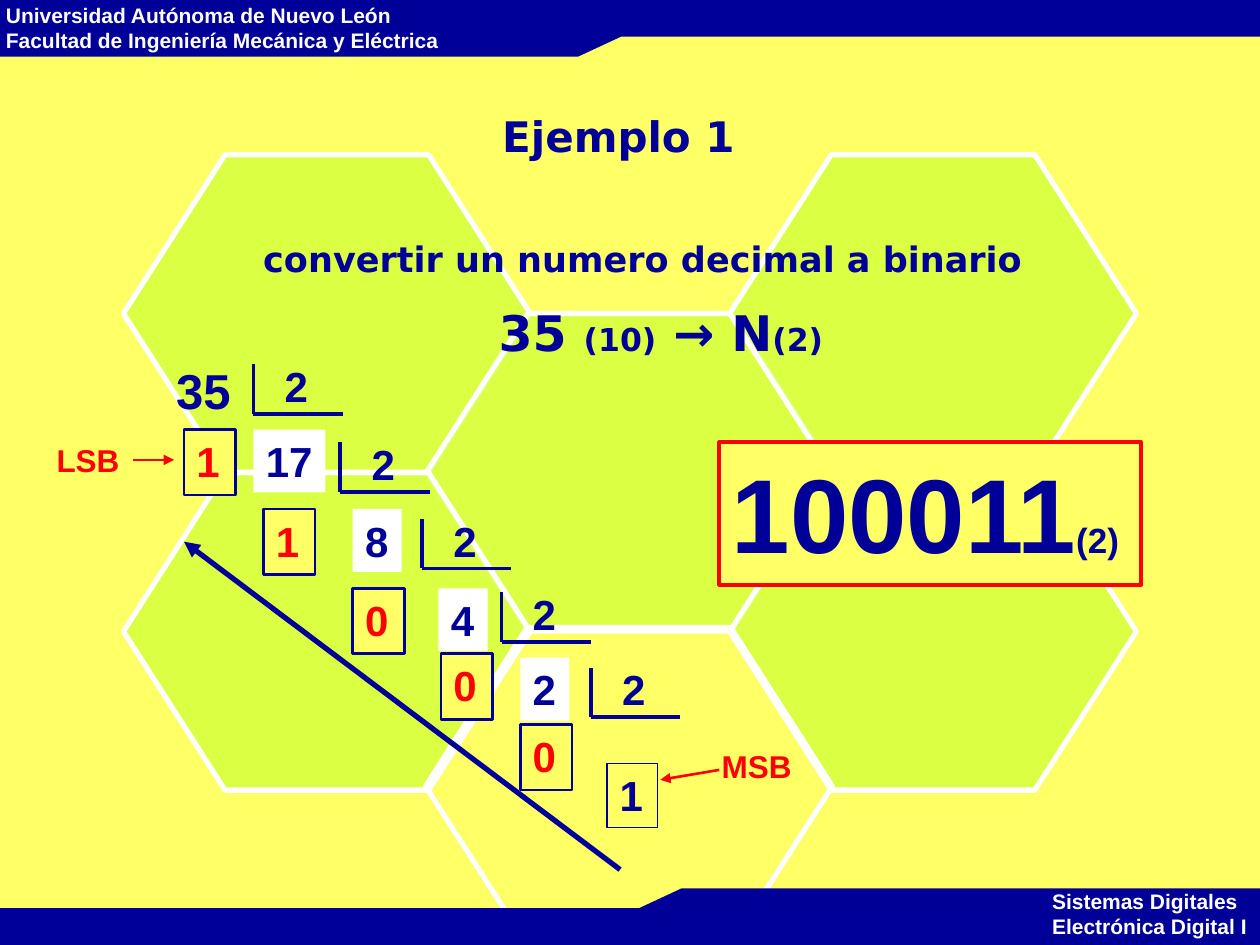
"""Builds the slide that converts decimal 35 to binary by repeated division."""
from dataclasses import dataclass
from typing import Optional

from lxml.etree import SubElement
from pptx import Presentation
from pptx.dml.color import RGBColor
from pptx.enum.shapes import MSO_CONNECTOR as CONN, MSO_SHAPE as SHAPE
from pptx.enum.text import MSO_ANCHOR as ANCHOR, MSO_AUTO_SIZE as AUTO, PP_ALIGN as ALIGN
from pptx.oxml.ns import qn
from pptx.util import Cm, Pt

NAVY, RED, WHITE, YELLOW, LIME = "000099", "FF0000", "FFFFFF", "FFFF66", "CCFF33"
SANS, DISPLAY = "Arial", "DejaVu Sans"
WIDTH, HEIGHT = 25.4, 19.05


@dataclass
class Box:
    x: float
    y: float
    w: float
    h: float
    fill: Optional[str] = None
    line: Optional[str] = None
    weight: float = 1.5


@dataclass
class Division:
    bracket: tuple[float, float]
    remainder: tuple[float, float]
    bit: str
    quotient: Optional[tuple[float, float]] = None
    value: str = ""
    width: float = 0.99


DIVISIONS = [
    Division((5.11, 7.34), (3.71, 8.66), "1", (5.11, 8.66), "17", 1.45),
    Division((6.86, 8.92), (5.31, 10.26), "1", (7.11, 10.26), "8"),
    Division((8.51, 10.46), (7.11, 11.86), "0", (8.84, 11.86), "4"),
    Division((10.11, 11.94), (8.89, 13.18), "0", (10.49, 13.26), "2"),
    Division((11.91, 13.46), (10.49, 14.61), "0"),
]
HEXAGONS = [
    (2.49, 3.12, LIME), (8.6, 6.32, LIME), (14.71, 9.53, LIME),
    (14.71, 3.12, LIME), (2.49, 9.53, LIME), (8.58, 12.65, None),
]
BAND = [(-0.03, 1.14), (-0.05, -0.08), (25.4, -0.05),
        (25.4, 0.74), (12.52, 0.74), (11.66, 1.14)]


def rgb(color: str) -> RGBColor:
    return RGBColor.from_string(color)


def paint(shape, fill: Optional[str], line: Optional[str], weight: float = 1.5) -> None:
    if fill:
        shape.fill.solid()
        shape.fill.fore_color.rgb = rgb(fill)
    else:
        shape.fill.background()
    if line:
        shape.line.color.rgb = rgb(line)
        shape.line.width = Pt(weight)
    else:
        shape.line.fill.background()


def add_run(p, text: str, size: float, color: str, name: str = SANS, bold: bool = True) -> None:
    r = p.add_run()
    r.text = text
    for key, value in {"size": Pt(size), "name": name, "bold": bold}.items():
        setattr(r.font, key, value)
    r.font.color.rgb = rgb(color)


def add_label(s, box: Box, lines: list[str], size: float, color: str):
    sp = s.shapes.add_textbox(Cm(box.x), Cm(box.y), Cm(box.w), Cm(box.h))
    paint(sp, box.fill, box.line, box.weight)
    tf = sp.text_frame
    for key, value in {"word_wrap": False, "auto_size": AUTO.SHAPE_TO_FIT_TEXT}.items():
        setattr(tf, key, value)
    for i, text in enumerate(lines):
        p = tf.add_paragraph() if i else tf.paragraphs[0]
        add_run(p, text, size, color)
    return sp


def add_line(s, start: tuple, end: tuple, color: str, weight: float, arrow: bool = False) -> None:
    c = s.shapes.add_connector(CONN.STRAIGHT, *map(Cm, start + end))
    c.line.color.rgb = rgb(color)
    c.line.width = Pt(weight)
    props = c.element.spPr
    if arrow:
        SubElement(props.find(qn("a:ln")), qn("a:tailEnd"), type="triangle")
    SubElement(props, qn("a:effectLst"))


def add_hexagon(s, x: float, y: float, fill: Optional[str]) -> None:
    sp = s.shapes.add_shape(SHAPE.HEXAGON, Cm(x), Cm(y), Cm(8.2), Cm(6.4))
    sp.shadow.inherit = False
    sp.adjustments[0] = 0.32
    paint(sp, fill, WHITE, 3)
    if fill:
        color = sp.element.spPr.find(qn("a:solidFill"))[0]
        SubElement(color, qn("a:alpha"), val="70000")


def add_band(s, points: list[tuple[float, float]]) -> None:
    start, *rest = [(Cm(x), Cm(y)) for x, y in points]
    builder = s.shapes.build_freeform(*start)
    builder.add_line_segments(rest, close=True)
    sp = builder.convert_to_shape()
    sp.shadow.inherit = False
    paint(sp, NAVY, None)


def add_division(s, d: Division) -> None:
    x, y = d.bracket
    add_line(s, (x, y), (x, y + 1), NAVY, 2.25)
    add_line(s, (x, y + 1), (x + 1.8, y + 1), NAVY, 2.25)
    add_label(s, Box(x + 0.38, y - 0.2, 0.99, 1.27), ["2"], 24, NAVY)
    if d.quotient:
        add_label(s, Box(*d.quotient, d.width, 1.27, WHITE), [d.value], 24, NAVY)
    add_label(s, Box(*d.remainder, 1.04, 1.32, YELLOW, NAVY), [d.bit], 24, RED)


def add_title(s) -> None:
    sp = s.shapes.title
    place = {"left": Cm(3.71), "top": Cm(1.93), "width": Cm(17.81), "height": Cm(1.6)}
    for key, value in place.items():
        setattr(sp, key, value)
    sp.text_frame.vertical_anchor = ANCHOR.MIDDLE
    p = sp.text_frame.paragraphs[0]
    p.alignment = ALIGN.CENTER
    add_run(p, "Ejemplo 1 ", 24, NAVY, DISPLAY)


def add_problem(s) -> None:
    tf = s.shapes.add_textbox(Cm(1.91), Cm(4.32), Cm(22.1), Cm(3.61)).text_frame
    tf.word_wrap = True
    p = tf.paragraphs[0]
    for key, value in {"alignment": ALIGN.CENTER, "line_spacing": 1.4, "space_before": Pt(4)}.items():
        setattr(p, key, value)
    indent = Cm(0.95)
    props = p._p.get_or_add_pPr()
    props.set("marL", str(indent))
    props.set("indent", str(-indent))
    add_run(p, "convertir un numero decimal a binario", 20, NAVY, DISPLAY)
    p.add_line_break()
    for text, size in [("35 ", 28), ("(10)", 18), (" → N", 28), ("(2)", 18)]:
        add_run(p, text, size, NAVY, DISPLAY)
    add_run(p, " ", 20, NAVY, DISPLAY, False)


def main() -> None:
    prs = Presentation()
    prs.slide_width, prs.slide_height = Cm(WIDTH), Cm(HEIGHT)
    s = prs.slides.add_slide(prs.slide_layouts[5])
    s.background.fill.solid()
    s.background.fill.fore_color.rgb = rgb(YELLOW)

    add_band(s, BAND)
    add_label(s, Box(-0.13, -0.08, 9.25, 1.27),
              ["Universidad Autónoma de Nuevo León",
               "Facultad de Ingeniería Mecánica y Eléctrica"], 12, WHITE)
    for hexagon in HEXAGONS:
        add_hexagon(s, *hexagon)
    add_band(s, [(WIDTH - x, HEIGHT - y) for x, y in BAND])
    add_label(s, Box(20.96, 17.78, 4.45, 1.27),
              ["Sistemas Digitales", "Electrónica Digital I"], 12, WHITE)

    add_title(s)
    add_problem(s)
    add_label(s, Box(3.3, 7.14, 1.63, 1.45), ["35"], 28, NAVY)
    for division in DIVISIONS:
        add_division(s, division)
    add_label(s, Box(12.24, 15.39, 1.02, 1.3, YELLOW, NAVY, 0.75), ["1"], 24, NAVY)

    add_label(s, Box(0.89, 8.76, 1.78, 1.02), ["LSB"], 18, RED)
    add_line(s, (2.69, 9.27), (3.51, 9.27), RED, 1.5, True)
    add_label(s, Box(14.3, 14.94, 1.93, 1.02), ["MSB"], 18, RED)
    add_line(s, (14.5, 15.52), (13.31, 15.72), RED, 1.5, True)

    result = add_label(s, Box(14.5, 8.92, 8.51, 2.87, YELLOW, RED, 2.25), ["100011"], 60, NAVY)
    add_run(result.text_frame.paragraphs[0], "(2)", 20, NAVY)
    add_line(s, (12.5, 17.53), (3.71, 10.92), NAVY, 3, True)
    prs.save("out.pptx")


if __name__ == "__main__":
    main()
